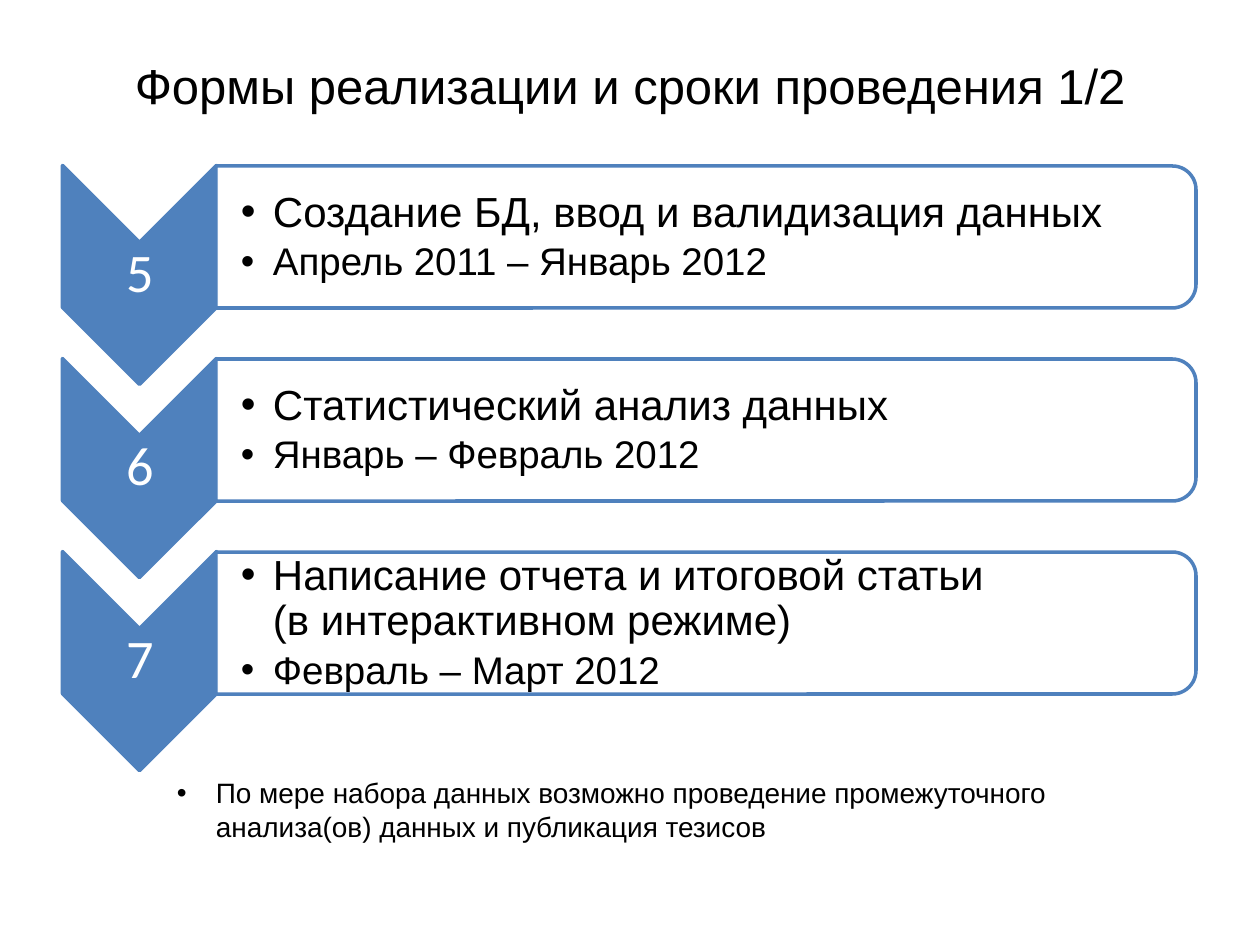
from dataclasses import dataclass

import pptx
import pptx.dml.color
import pptx.enum.shapes
import pptx.enum.text
import pptx.oxml.ns
import pptx.util
from lxml import etree

SCALE = 914400 / 126  # EMU in one px
BLUE, WHITE, BLACK = "4F81BD", "FFFFFF", "000000"
SHAPES = pptx.enum.shapes.MSO_SHAPE
ALIGN = pptx.enum.text.PP_ALIGN
ANCHOR = pptx.enum.text.MSO_ANCHOR


@dataclass
class Area:
    left: int
    top: int
    width: int
    height: int

    def down(self, distance: int) -> "Area":
        return Area(self.left, self.top + distance, self.width, self.height)

    def emu(self) -> list:
        return [px(n) for n in (self.left, self.top, self.width, self.height)]


@dataclass
class Line:
    text: str
    size: int
    color: str = BLACK
    font: str = "Arial"
    align: ALIGN = ALIGN.LEFT
    margin: int = 0
    bullet: bool = False
    spacing: float = 1.0
    after: float = 0


@dataclass
class Stage:
    number: str
    task: str
    dates: str


STAGES = [
    Stage("5", "Создание БД, ввод и валидизация данных", "Апрель 2011 – Январь 2012"),
    Stage("6", "Статистический анализ данных", "Январь – Февраль 2012"),
    Stage("7", "Написание отчета и итоговой статьи\v(в интерактивном режиме)", "Февраль – Март 2012"),
]
STAGE_STEP = 193
# Chevron and panel areas are given before their quarter turn
CHEVRON = Area(30, 198, 219, 154)
NUMBER = Area(63, 242, 154, 66)
PANEL = Area(635, -253, 142, 980)
DETAILS = Area(217, 173, 974, 129)


def px(length: int) -> pptx.util.Emu:
    return pptx.util.Emu(round(length * SCALE))


def rgb(color: str) -> pptx.dml.color.RGBColor:
    return pptx.dml.color.RGBColor.from_string(color)


def add_bullet(para) -> None:
    properties = para._p.get_or_add_pPr()
    for tag, name, value in (("a:buFont", "typeface", "Arial"), ("a:buChar", "char", "•")):
        etree.SubElement(properties, pptx.oxml.ns.qn(tag)).set(name, value)


def add_text(page, area: Area, lines: list[Line], insets: tuple = (13, 6, 13, 6),
             anchor=ANCHOR.MIDDLE) -> None:
    frame = page.shapes.add_textbox(*area.emu()).text_frame
    frame.word_wrap = True
    frame.vertical_anchor = anchor
    frame.margin_left, frame.margin_top, frame.margin_right, frame.margin_bottom = map(px, insets)
    frame.text = "\n".join(line.text for line in lines)
    for para, line in zip(frame.paragraphs, lines):
        para.alignment = line.align
        para.line_spacing = line.spacing
        para.space_after = pptx.util.Pt(line.after)
        properties = para._p.get_or_add_pPr()
        properties.set("marL", str(px(line.margin)))
        properties.set("indent", str(-px(line.margin) if line.bullet else 0))
        if line.bullet:
            add_bullet(para)
        for span in para.runs:
            span.font.name = line.font
            span.font.size = pptx.util.Pt(line.size)
            span.font.color.rgb = rgb(line.color)


def add_turned_shape(page, kind, area: Area, fill: str):
    shape = page.shapes.add_shape(kind, *area.emu())
    shape.rotation = 90
    shape.shadow.inherit = False
    shape.fill.solid()
    shape.fill.fore_color.rgb = rgb(fill)
    shape.line.color.rgb = rgb(BLUE)
    shape.line.width = pptx.util.Pt(2)
    return shape


def add_stage(page, stage: Stage, offset: int) -> None:
    # Numbered chevron
    add_turned_shape(page, SHAPES.CHEVRON, CHEVRON.down(offset), BLUE)
    number = Line(stage.number, 31, WHITE, "Calibri", ALIGN.CENTER, spacing=0.9)
    add_text(page, NUMBER.down(offset), [number], (3, 3, 3, 3))

    # Slightly transparent panel with the task and its dates
    panel = add_turned_shape(page, SHAPES.ROUND_2_SAME_RECTANGLE, PANEL.down(offset), WHITE)
    color = panel._element.spPr.find(".//" + pptx.oxml.ns.qn("a:srgbClr"))
    etree.SubElement(color, pptx.oxml.ns.qn("a:alpha")).set("val", "90000")
    details = [Line(text, size, margin=32, bullet=True, spacing=0.9, after=size * 0.15)
               for text, size in ((stage.task, 24), (stage.dates, 22))]
    add_text(page, DETAILS.down(offset), details, (24, 3, 3, 3))


def main() -> None:
    deck = pptx.Presentation()
    deck.slide_width, deck.slide_height = px(1260), px(945)
    page = deck.slides.add_slide(deck.slide_layouts[6])

    # Title
    add_text(page, Area(63, 45, 1134, 80),
             [Line("Формы реализации и сроки проведения 1/2", 28, align=ALIGN.CENTER)])

    # Stages
    for index, stage in enumerate(STAGES):
        add_stage(page, stage, index * STAGE_STEP)

    # Closing note
    add_text(page, Area(164, 770, 1022, 81), [
        Line("По мере набора данных возможно проведение промежуточного", 16, margin=39, bullet=True),
        Line("анализа(ов) данных и публикация тезисов", 16, margin=39),
    ], anchor=ANCHOR.TOP)

    deck.save("out.pptx")


if __name__ == "__main__":
    main()
